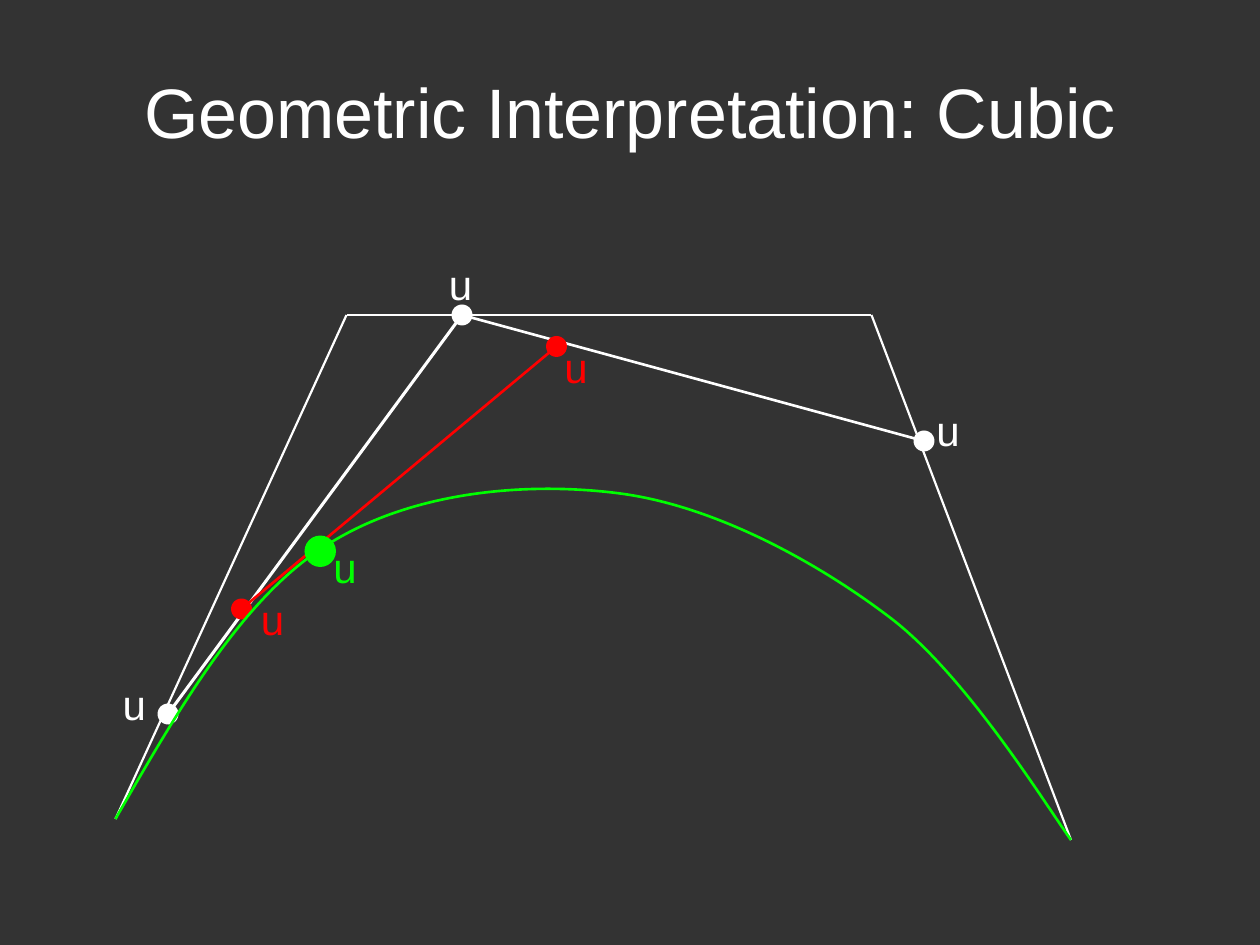
"""Build a slide on the geometric interpretation of a cubic Bézier curve."""
from dataclasses import dataclass
from itertools import pairwise

import pptx
import pptx.dml.color
import pptx.enum.shapes
import pptx.enum.text
import pptx.oxml
import pptx.oxml.ns
import pptx.util

Pt = pptx.util.Pt
qn = pptx.oxml.ns.qn
RGB = pptx.dml.color.RGBColor.from_string


@dataclass(frozen=True)
class Theme:
    background: str = "333333"
    white: str = "FFFFFF"
    red: str = "FF0000"
    green: str = "00FF00"
    font: str = "Arial"
    title_size: int = 40
    label_size: int = 24


THEME = Theme()


def style_text(frame, text, size, color):
    frame.text = text
    paragraph = frame.paragraphs[0]
    paragraph.font.name = THEME.font
    paragraph.font.size = Pt(size)
    paragraph.font.color.rgb = RGB(color)
    return paragraph


def add_title(slide, text):
    title = slide.shapes.title
    title.left, title.top, title.width, title.height = Pt(54), Pt(30), Pt(612), Pt(66)
    title.text_frame.vertical_anchor = pptx.enum.text.MSO_ANCHOR.MIDDLE
    paragraph = style_text(title.text_frame, text, THEME.title_size, THEME.white)
    paragraph.alignment = pptx.enum.text.PP_ALIGN.CENTER


def add_segment(shapes, start, end, color, width):
    segment = shapes.add_connector(
        pptx.enum.shapes.MSO_CONNECTOR.STRAIGHT, *map(Pt, (*start, *end)))
    segment.line.color.rgb = RGB(color)
    segment.line.width = Pt(width)
    properties = segment._element.spPr
    properties.append(pptx.oxml.parse_xml(
        f'<a:effectLst {pptx.oxml.ns.nsdecls("a")}/>'))


def add_point(shapes, center, color, diameter=12):
    left, top = (value - diameter / 2 for value in center)
    point = shapes.add_shape(pptx.enum.shapes.MSO_SHAPE.OVAL,
                             *map(Pt, (left, top, diameter, diameter)))
    point.shadow.inherit = False
    point.fill.solid()
    point.fill.fore_color.rgb = RGB(color)
    point.line.fill.background()


def add_label(shapes, corner, color):
    label = shapes.add_textbox(*map(Pt, (*corner, 28, 36)))
    label.text_frame.word_wrap = False
    label.text_frame.auto_size = pptx.enum.text.MSO_AUTO_SIZE.SHAPE_TO_FIT_TEXT
    style_text(label.text_frame, "u", THEME.label_size, color)


def add_curve(shapes, start, controls, color, width):
    """Draw cubic Bézier pieces, each given by three control points."""
    builder = shapes.build_freeform(*map(Pt, start))
    builder.add_line_segments([tuple(map(Pt, control)) for control in controls], close=False)
    curve = builder.convert_to_shape()
    steps = list(curve._element.iter(qn("a:lnTo")))
    for first in range(0, len(steps), 3):
        piece = pptx.oxml.parse_xml(f'<a:cubicBezTo {pptx.oxml.ns.nsdecls("a")}/>')
        steps[first].addprevious(piece)
        for step in steps[first:first + 3]:
            piece.append(step[0])
            step.getparent().remove(step)
    curve.shadow.inherit = False
    curve.fill.background()
    curve.line.color.rgb = RGB(color)
    curve.line.width = Pt(width)


def add_interpolation(slide, points, label_corners, color, widths):
    """Join the interpolated points, then mark and label each of them."""
    shapes = slide.shapes.add_group_shape().shapes
    for (start, end), width in zip(pairwise(points), widths):
        add_segment(shapes, start, end, color, width)
    for point, corner in zip(points, label_corners):
        add_point(shapes, point, color)
        add_label(shapes, corner, color)


def main():
    deck = pptx.Presentation()
    deck.slide_width, deck.slide_height = Pt(720), Pt(540)
    slide = deck.slides.add_slide(deck.slide_layouts.get_by_name("Title Only"))
    slide.background.fill.solid()
    slide.background.fill.fore_color.rgb = RGB(THEME.background)
    add_title(slide, "Geometric Interpretation: Cubic")

    control_polygon = [(66, 468), (198, 180), (498, 180), (612, 480)]
    polygon_shapes = slide.shapes.add_group_shape().shapes
    for start, end in pairwise(control_polygon):
        add_segment(polygon_shapes, start, end, THEME.white, 1.25)

    add_interpolation(slide, [(96, 408), (264, 180), (528, 252)],
                      [(63, 384), (249.5, 144), (528, 227.5)],
                      THEME.white, [1.75, 1.5])
    add_interpolation(slide, [(138, 348), (318, 198)],
                      [(142, 335.5), (315.5, 191.5)], THEME.red, [1.5])

    curve_controls = [
        (102, 405.5), (138, 342.5), (186, 312),
        (234, 281), (300, 275), (354, 282),
        (408, 289), (467, 321), (510, 354),
        (553, 387.5), (597, 459), (612, 480),
    ]
    curve_shapes = slide.shapes.add_group_shape().shapes
    add_curve(curve_shapes, control_polygon[0], curve_controls, THEME.green, 1.5)
    add_point(curve_shapes, (183, 315), THEME.green, diameter=18)
    add_label(curve_shapes, (183.5, 306), THEME.green)

    deck.save("out.pptx")


if __name__ == "__main__":
    main()
